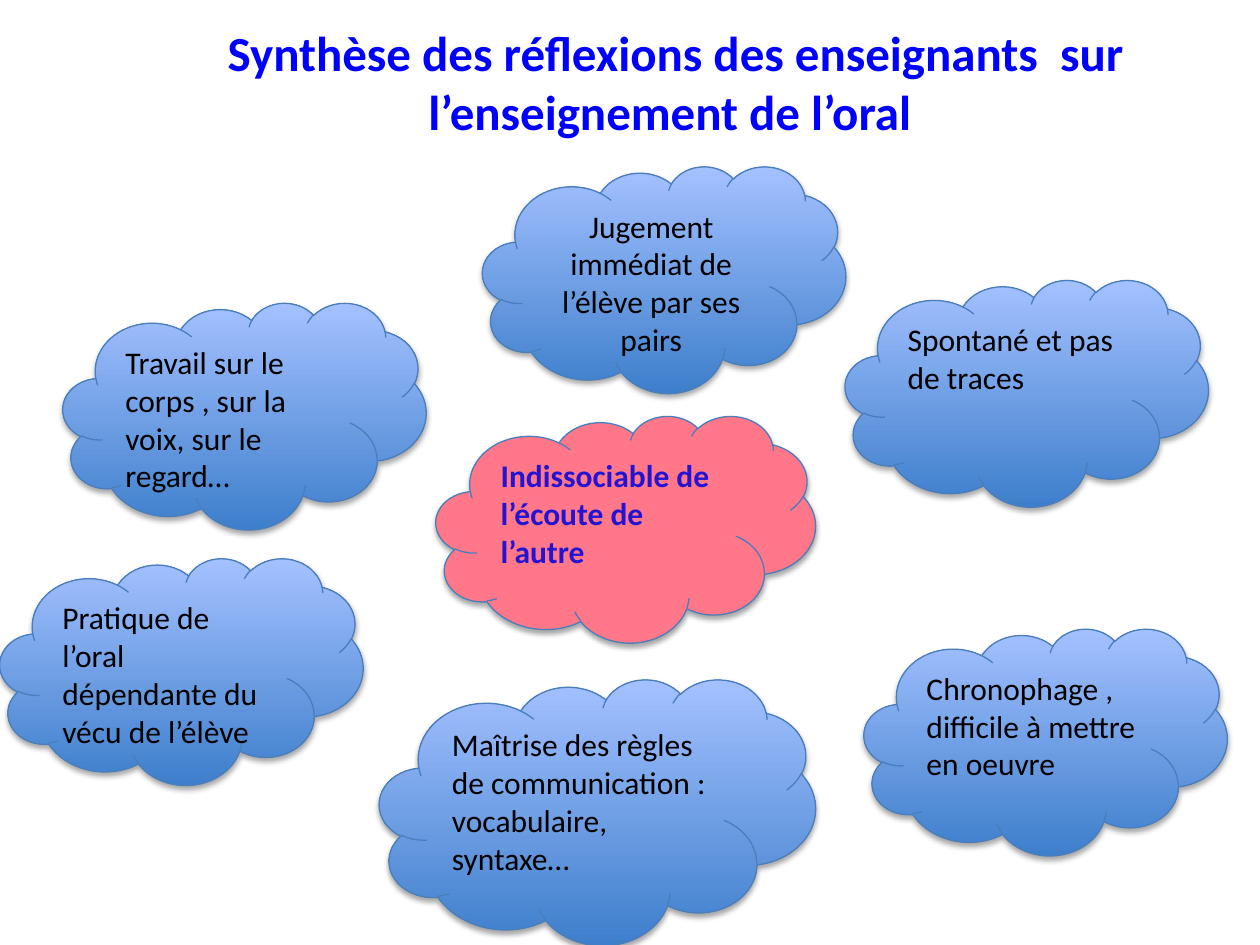
import dataclasses

import lxml.etree
import pptx
import pptx.dml.color
import pptx.enum.shapes
import pptx.enum.text
import pptx.oxml.ns
import pptx.shapes.autoshape
import pptx.slide
import pptx.text.text
import pptx.util

Cm = pptx.util.Cm
Pt = pptx.util.Pt
RGBColor = pptx.dml.color.RGBColor
Align = pptx.enum.text.PP_ALIGN

FONT = "Calibri"
TITLE_BLUE = RGBColor(0x00, 0x00, 0xFF)
DEEP_BLUE = RGBColor(0x3E, 0x7F, 0xCC)
SKY_BLUE = RGBColor(0xA4, 0xC1, 0xFF)
OUTLINE_BLUE = RGBColor(0x4A, 0x7E, 0xBB)
CORAL = RGBColor(0xFF, 0x77, 0x88)
INDIGO = RGBColor(0x23, 0x14, 0xD3)
BLACK = RGBColor(0x00, 0x00, 0x00)


@dataclasses.dataclass(frozen=True)
class Cloud:
    """A thought cloud; lengths are in centimetres."""
    left: float
    top: float
    lines: tuple[str, ...]
    width: float = 7.32
    height: float = 4.57
    align: Align = Align.LEFT
    central: bool = False


CLOUDS = (
    Cloud(1.27, 6.1, ("Travail sur le corps , sur la voix, sur le regard…",)),
    Cloud(17.04, 5.64, ("Spontané et pas de traces",)),
    Cloud(0, 11.25, ("Pratique de l’oral dépendante du vécu de l’élève",)),
    Cloud(17.42, 12.67, ("Chronophage ,", "difficile à mettre en oeuvre")),
    Cloud(8.79, 8.38, ("Indissociable de l’écoute de l’autre",),
          width=7.65, central=True),
    Cloud(7.65, 13.69,
          ("Maîtrise des règles de communication : vocabulaire, syntaxe…",),
          width=8.79, height=5.36),
    Cloud(9.73, 3.35, ("Jugement immédiat de l’élève par ses pairs",),
          align=Align.CENTER),
)


def write_lines(frame: pptx.text.text.TextFrame, lines: tuple[str, ...],
                size: int, color: RGBColor, bold: bool, align: Align) -> None:
    frame.word_wrap = True
    frame.vertical_anchor = pptx.enum.text.MSO_ANCHOR.TOP
    for index, line in enumerate(lines):
        para = frame.add_paragraph() if index else frame.paragraphs[0]
        para.alignment = align
        span = para.add_run()
        span.text = line
        span.font.name = FONT
        span.font.size = Pt(size)
        span.font.bold = bold
        span.font.color.rgb = color


def add_soft_shadow(shape: pptx.shapes.autoshape.Shape) -> None:
    shape.shadow.inherit = False
    qn = pptx.oxml.ns.qn
    effects = shape.element.spPr.find(qn("a:effectLst"))
    shadow = lxml.etree.SubElement(
        effects, qn("a:outerShdw"), blurRad=str(Pt(3.1)), dist=str(Pt(1.8)),
        dir="5400000", rotWithShape="0")
    color = lxml.etree.SubElement(shadow, qn("a:srgbClr"), val=str(BLACK))
    lxml.etree.SubElement(color, qn("a:alpha"), val="35000")


def add_cloud(page: pptx.slide.Slide, cloud: Cloud) -> None:
    shape = page.shapes.add_shape(
        pptx.enum.shapes.MSO_SHAPE.CLOUD, Cm(cloud.left), Cm(cloud.top),
        Cm(cloud.width), Cm(cloud.height))
    if cloud.central:
        shape.fill.solid()
        shape.fill.fore_color.rgb = CORAL
    else:
        shape.fill.gradient()
        shape.fill.gradient_angle = 90
        for stop, color in zip(shape.fill.gradient_stops, (DEEP_BLUE, SKY_BLUE)):
            stop.color.rgb = color
    shape.line.color.rgb = OUTLINE_BLUE
    shape.line.width = Pt(0.75)
    add_soft_shadow(shape)
    write_lines(shape.text_frame, cloud.lines, 18,
                INDIGO if cloud.central else BLACK, cloud.central, cloud.align)


def main() -> None:
    deck = pptx.Presentation()
    deck.slide_width, deck.slide_height = Cm(25.4), Cm(19.05)
    page = deck.slides.add_slide(deck.slide_layouts[6])

    # Title
    box = page.shapes.add_textbox(Cm(2.49), Cm(0.33), Cm(22.25), Cm(2.62))
    title = "Synthèse des réflexions des enseignants  sur l’enseignement de l’oral "
    write_lines(box.text_frame, (title,), 28, TITLE_BLUE, True, Align.CENTER)

    # Clouds of ideas around the central one
    for cloud in CLOUDS:
        add_cloud(page, cloud)

    deck.save("out.pptx")


if __name__ == "__main__":
    main()
